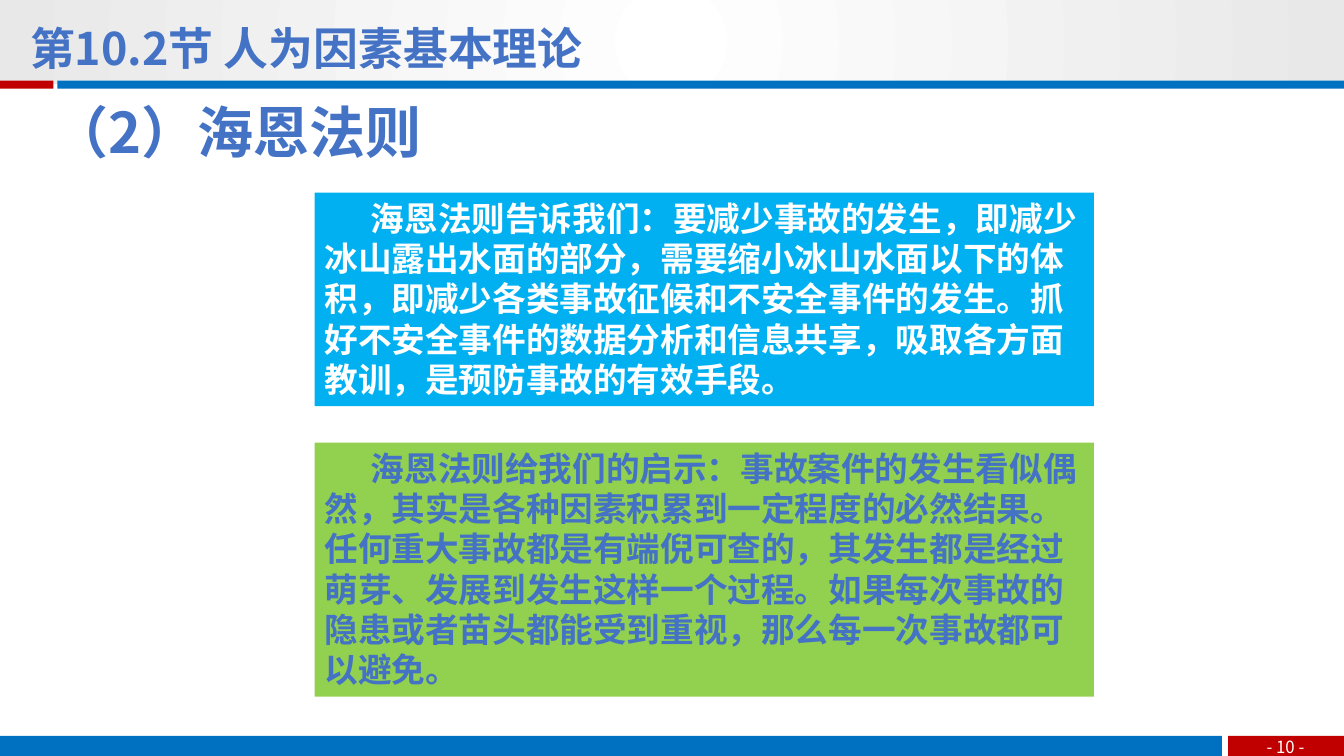
import pptx
import pptx.dml.color
import pptx.enum.shapes
import pptx.enum.text
import pptx.oxml
import pptx.oxml.ns
import pptx.util
from pptx.util import Inches

BLUE, RED, INK, WHITE = "0070C0", "C00000", "4472C4", "FFFFFF"
SANS = "Noto Sans CJK SC"
ALIGN = pptx.enum.text.PP_ALIGN
ANCHOR = pptx.enum.text.MSO_ANCHOR
AUTO_SIZE = pptx.enum.text.MSO_AUTO_SIZE

BOX_LEFT, BOX_WIDTH = 3.12, 7.73
LESSON = (
    "海恩法则告诉我们：要减少事故的发生，即减少冰山露出水面的部分，"
    "需要缩小冰山水面以下的体积，即减少各类事故征候和不安全事件的发生。"
    "抓好不安全事件的数据分析和信息共享，吸取各方面教训，是预防事故的有效手段。"
)
INSIGHT = (
    "海恩法则给我们的启示：事故案件的发生看似偶然，其实是各种因素积累到一定程度的必然结果。"
    "任何重大事故都是有端倪可查的，其发生都是经过萌芽、发展到发生这样一个过程。"
    "如果每次事故的隐患或者苗头都能受到重视，那么每一次事故都可以避免。"
)


def rgb(value):
    return pptx.dml.color.RGBColor.from_string(value)


def add_block(slide, box, color):
    block = slide.shapes.add_shape(
        pptx.enum.shapes.MSO_SHAPE.RECTANGLE, *map(Inches, box))
    block.shadow.inherit = False
    block.line.fill.background()
    block.fill.solid()
    block.fill.fore_color.rgb = rgb(color)
    return block


def set_radial_gradient(block, inner, outer):
    block.fill.gradient()
    for stop, color in zip(block.fill.gradient_stops, (inner, outer)):
        stop.color.rgb = rgb(color)
    linear = block._element.spPr.find(".//" + pptx.oxml.ns.qn("a:lin"))
    radial = pptx.oxml.parse_xml(
        f'<a:path {pptx.oxml.ns.nsdecls("a")} path="circle">'
        '<a:fillToRect l="50000" t="50000" r="50000" b="50000"/></a:path>')
    linear.getparent().replace(linear, radial)


def write(holder, text, size, color, font=SANS, bold=True, align=ALIGN.LEFT,
          anchor=ANCHOR.TOP, spacing=1.0, indent=0, wrap=True):
    frame = holder.text_frame
    frame.word_wrap = wrap
    frame.auto_size = AUTO_SIZE.NONE
    frame.vertical_anchor = anchor
    frame.text = text
    paragraph = frame.paragraphs[0]
    properties = paragraph._p.get_or_add_pPr()
    properties.set("marL", "0")
    properties.set("indent", str(Inches(indent)))
    properties.append(pptx.oxml.parse_xml(
        f'<a:buNone {pptx.oxml.ns.nsdecls("a")}/>'))
    paragraph.alignment = align
    paragraph.line_spacing = spacing
    paragraph.space_before = pptx.util.Pt(0)
    paragraph.font.name = font
    paragraph.font.size = pptx.util.Pt(size)
    paragraph.font.bold = bold
    paragraph.font.color.rgb = rgb(color)


def place(slide, holder, box):
    holder.left, holder.top, holder.width, holder.height = map(Inches, box)
    slide.shapes._spTree.append(holder._element)


def build_header(slide, box):
    left, top, width, height = box
    band = add_block(slide, (left - 0.02, top, width + 0.02, height), WHITE)
    set_radial_gradient(band, "FFFFFF", "E8E8E8")
    rule_top = top + height - 0.03
    add_block(slide, (left + 0.57, rule_top, width - 0.57, 0.08), BLUE)
    add_block(slide, (left, rule_top, 0.53, 0.08), RED)
    section = slide.shapes.title
    place(slide, section, (left, top - 0.11, 6.08, 0.91))
    write(section, "第10.2节 人为因素基本理论", 32, INK,
          align=ALIGN.CENTER, spacing=1.5)


def build_footer(slide, box):
    left, top, width, height = box
    number_width = 1.15
    number_left = left + width - number_width
    add_block(slide, (left, top, number_left - left - 0.06, height), BLUE)
    add_block(slide, (number_left, top, number_width, height), RED)
    page_number = slide.shapes.add_textbox(
        *map(Inches, (number_left + 0.18, top - 0.04, 0.78, 0.3)))
    write(page_number, "- 10 -", 12, WHITE, bold=False,
          align=ALIGN.CENTER, anchor=ANCHOR.MIDDLE, wrap=False)


def build_topic(slide, box):
    topic = slide.placeholders[1]
    place(slide, topic, box)
    write(topic, "（2）海恩法则", 40, INK, spacing=0.9)


def build_statement(slide, box, text, fill, color):
    statement = add_block(slide, box, fill)
    write(statement, text, 24, color, font="Arial", indent=0.46)


def main():
    presentation = pptx.Presentation()
    presentation.slide_width = Inches(13.33)
    presentation.slide_height = Inches(7.5)
    slide = presentation.slides.add_slide(presentation.slide_layouts[1])
    build_header(slide, (0, 0, 13.33, 0.83))
    build_footer(slide, (0, 7.3, 13.33, 0.2))
    build_statement(slide, (BOX_LEFT, 1.91, BOX_WIDTH, 2.12), LESSON, "00B0F0", WHITE)
    build_statement(slide, (BOX_LEFT, 4.39, BOX_WIDTH, 2.52), INSIGHT, "92D050", INK)
    build_topic(slide, (0.42, 0.99, 9.25, 0.63))
    presentation.save("out.pptx")


if __name__ == "__main__":
    main()
